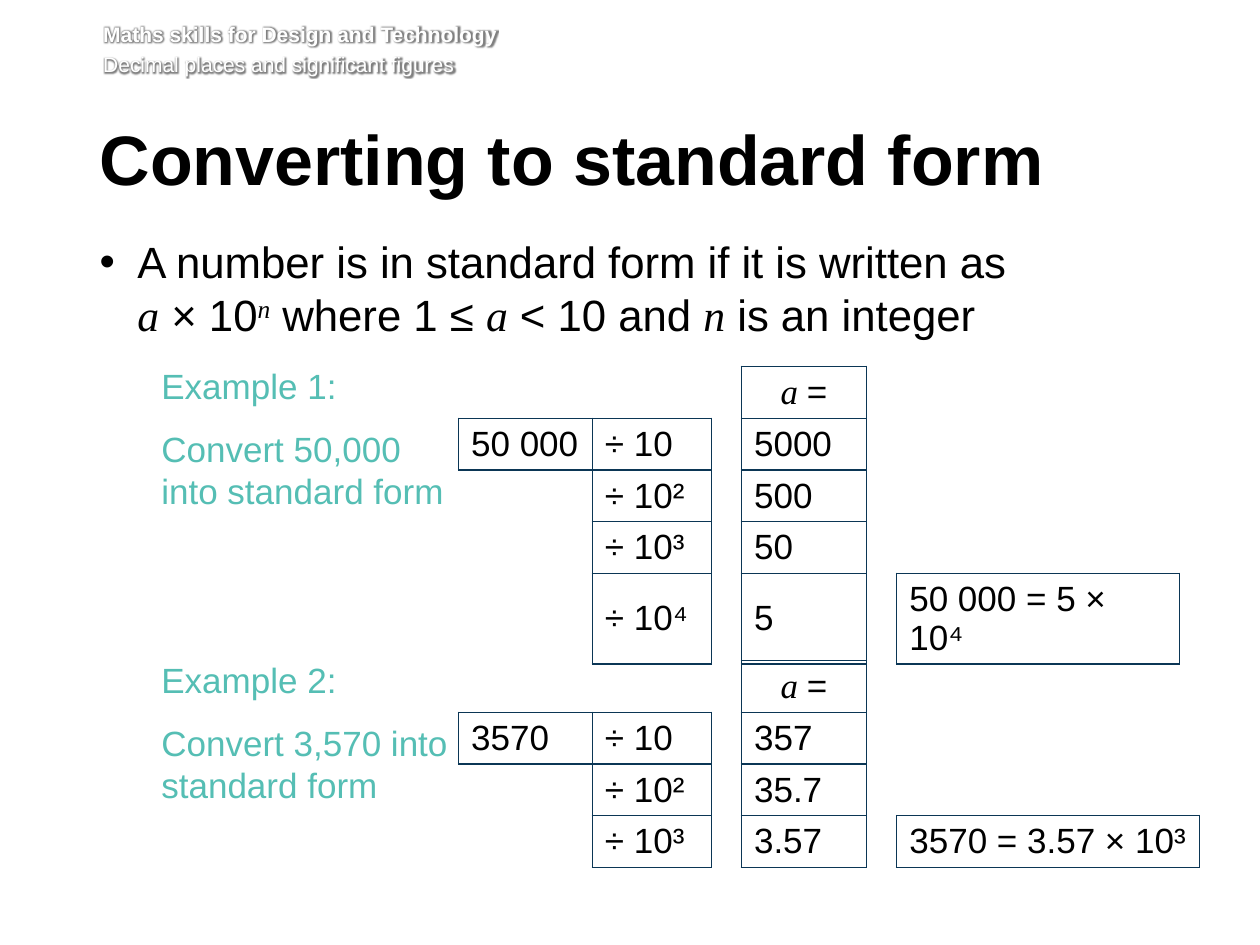
from lxml.etree import SubElement
from pptx import Presentation
from pptx.dml.color import RGBColor
from pptx.enum.text import MSO_ANCHOR, MSO_AUTO_SIZE, PP_ALIGN
from pptx.oxml import parse_xml
from pptx.oxml.ns import nsdecls, qn
from pptx.util import Pt

BLACK, WHITE, NAVY, TEAL = "000000", "FFFFFF", "0B3655", "55BEB4"
SERIF = dict(font="Times New Roman", italic=True)


def rgb(color):
    return RGBColor.from_string(color)


def add_text(p, text, size=20, color=BLACK, font="Arial", bold=False, italic=False,
             superscript=False):
    """Add a run for each line of the text, with line breaks between them."""
    for i, line in enumerate(text.split("\n")):
        if i:
            p.add_line_break()
        if line:
            r = p.add_run()
            r.text = line
            r.font.size, r.font.name = Pt(size), font
            r.font.bold, r.font.italic = bold, italic
            r.font.color.rgb = rgb(color)
            if superscript:
                r.font._element.set("baseline", "30000")
    return r


prs = Presentation()
prs.slide_width, prs.slide_height = Pt(720), Pt(540)
s = prs.slides.add_slide(prs.slide_layouts[1])
title, body = s.placeholders
header = s.shapes.add_textbox(0, 0, 0, 0)

# Frames: left, top, width, height, top inset, right inset
for sp, left, top, width, height, inset_top, inset_right in [
    (header, 59, 12.2, 635, 35.3, 0, 0),
    (title, 56.9, 71.3, 615.6, 52.6, 3.6, 7.2),
    (body, 56.9, 133.9, 614.2, 272.2, 0, 7.2),
]:
    sp.left, sp.top, sp.width, sp.height = Pt(left), Pt(top), Pt(width), Pt(height)
    tf = sp.text_frame
    tf.word_wrap, tf.auto_size = True, MSO_AUTO_SIZE.NONE
    tf.vertical_anchor = MSO_ANCHOR.TOP
    tf.margin_left, tf.margin_top = 0, Pt(inset_top)
    tf.margin_right, tf.margin_bottom = Pt(inset_right), Pt(3.6)

# Header: white text with a soft grey glow
tf = header.text_frame
for i, line in enumerate(["Maths skills for Design and Technology",
                          "Decimal places and significant figures"]):
    p = tf.add_paragraph() if i else tf.paragraphs[0]
    p.space_before = Pt(2.9 * i)
    r = add_text(p, line, size=12, color=WHITE, bold=i == 0)
    fill = r.font._element.find(qn("a:solidFill"))
    fill.addnext(parse_xml(
        f'<a:effectLst {nsdecls("a")}><a:glow rad="38100"><a:srgbClr val="808080"/>'
        '</a:glow></a:effectLst>'))

# Title
p = title.text_frame.paragraphs[0]
p.alignment, p.line_spacing = PP_ALIGN.LEFT, Pt(39)
add_text(p, "Converting to standard form", size=40, bold=True)

# Definition
tf = body.text_frame
p = tf.paragraphs[0]
pPr = p._p.get_or_add_pPr()
pPr.set("marL", str(Pt(21.6)))
pPr.set("indent", str(Pt(-21.6)))
SubElement(pPr, qn("a:buChar"), char="•")
p.line_spacing, p.space_before, p.space_after = Pt(30.3), 0, Pt(14)
for text, fmt in [
    ("A number is in standard form if it is written as\n", {}),
    ("a", SERIF), (" × 10", {}), ("n", dict(SERIF, superscript=True)),
    (" where 1 ≤ ", {}), ("a", SERIF), (" < 10 and ", {}), ("n", SERIF),
    (" is an integer", {}),
]:
    add_text(p, text, size=25, **fmt)

# Examples
for text, before in [
    ("Example 1:", 0), ("Convert 50,000\ninto standard form", 0),
    ("Example 2:", 72), ("Convert 3,570 into\nstandard form", 0),
]:
    p = tf.add_paragraph()
    p.level = 1
    pPr = p._p.get_or_add_pPr()
    pPr.set("marL", str(Pt(35.3)))
    pPr.set("indent", "0")
    SubElement(pPr, qn("a:buNone"))
    p.line_spacing, p.space_before, p.space_after = Pt(24), Pt(before), Pt(12)
    add_text(p, text, color=TEAL)

# Working tables: number, divisions, gap, values of a, gap, result
EDGES = {"a:lnL": (0, -1), "a:lnR": (0, 1), "a:lnT": (-1, 0), "a:lnB": (1, 0)}
for top, result_width, number, values, result in [
    (209.4, 161.5, "50 000", ["5000", "500", "50", "5"], "50 000 = 5 × 10⁴"),
    (377.4, 173, "3570", ["357", "35.7", "3.57"], "3570 = 3.57 × 10³"),
]:
    widths = [76.5, 68, 17, 71.5, 17, result_width]
    last = len(values)
    texts = {(0, 3): "a =", (1, 0): number, (last, 5): result}
    for row, value in enumerate(values, 1):
        texts[row, 1] = "÷ 10" + " ²³⁴"[row - 1].strip()
        texts[row, 3] = value

    frame = s.shapes.add_table(last + 1, len(widths), Pt(262), Pt(top),
                               Pt(sum(widths)), Pt(28 * (last + 1)))
    table = frame.table
    table.first_row = table.horz_banding = False
    for column, width in zip(table.columns, widths):
        column.width = Pt(width)
    for row in range(last + 1):
        table.rows[row].height = Pt(28)
        for col in range(len(widths)):
            cell = table.cell(row, col)
            cell.vertical_anchor = MSO_ANCHOR.MIDDLE
            tcPr = cell._tc.get_or_add_tcPr()
            for tag, (down, right) in EDGES.items():
                ln = SubElement(tcPr, qn(tag), w=str(Pt(1)))
                if (row, col) in texts or (row + down, col + right) in texts:
                    fill = SubElement(ln, qn("a:solidFill"))
                    SubElement(fill, qn("a:srgbClr"), val=NAVY)
                else:
                    SubElement(ln, qn("a:noFill"))
            cell.fill.background()
            p = cell.text_frame.paragraphs[0]
            if row == 0 and col == 3:
                p.alignment = PP_ALIGN.CENTER
                add_text(p, "a ", **SERIF)
                add_text(p, "=")
            elif (row, col) in texts:
                add_text(p, texts[row, col])

prs.save("out.pptx")
